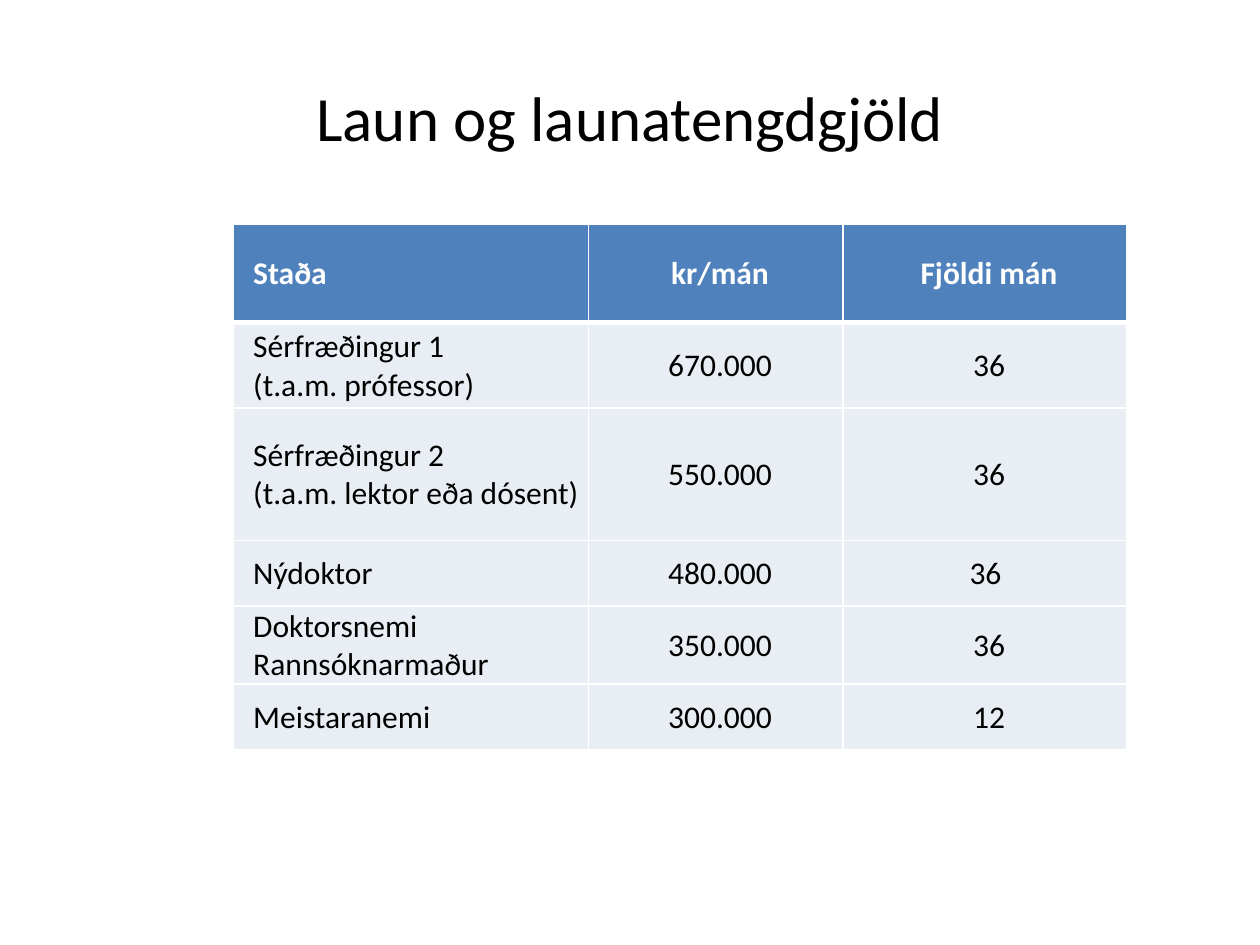
from lxml import etree
from pptx import Presentation
from pptx import util as u
from pptx.dml.color import RGBColor
from pptx.enum import text
from pptx.oxml.ns import qn

ROWS = [
    ("Staða", "kr/mán", "Fjöldi mán"),
    ("Sérfræðingur 1\n(t.a.m. prófessor)", "670.000", "36"),
    ("Sérfræðingur 2\n(t.a.m. lektor eða dósent)", "550.000", "36"),
    ("Nýdoktor", "480.000", "36 "),
    ("Doktorsnemi\nRannsóknarmaður", "350.000", "36"),
    ("Meistaranemi", "300.000", "12"),
]
WIDTHS = [2.82, 2.02, 2.25]
HEIGHTS = [0.78, 0.68, 1.05, 0.52, 0.62, 0.52]
MID = text.MSO_ANCHOR.MIDDLE
LEFT, CENTER = text.PP_ALIGN.LEFT, text.PP_ALIGN.CENTER


def color(hex):
    """Turn a hex string into a colour."""
    return RGBColor.from_string(hex)


def assign(item, values):
    """Set attributes from a dict of format values."""
    for name, value in values.items():
        setattr(item, name, value)


def write(frame, words, size, hue, align, bold=False):
    """Fill a text frame with evenly styled paragraphs."""
    frame.text = words
    for para in frame.paragraphs:
        para.alignment = align
        for run in para.runs:
            assign(run.font, {"name": "Calibri", "size": u.Pt(size), "bold": bold})
            run.font.color.rgb = color(hue)


def border(cell, base):
    """Draw white cell edges with the given base width in points."""
    props = cell._tc.get_or_add_tcPr()
    edges = {"a:lnL": 1, "a:lnR": 1, "a:lnT": 1, "a:lnB": base}
    for place, (tag, width) in enumerate(edges.items()):
        line = etree.Element(qn(tag), w=str(u.Pt(width)))
        fill = etree.SubElement(line, qn("a:solidFill"))
        etree.SubElement(fill, qn("a:srgbClr"), val="FFFFFF")
        props.insert(place, line)


def title(slide, left, top, width, height):
    """Place the centred heading."""
    box = slide.shapes.add_textbox(*map(u.Inches, (left, top, width, height)))
    assign(box.text_frame, {"word_wrap": True, "vertical_anchor": MID})
    write(box.text_frame, "Laun og launatengdgjöld", 36, "000000", CENTER)


def salaries(slide, left, top, width, height):
    """Place the salary table."""
    area = map(u.Inches, (left, top, width, height))
    table = slide.shapes.add_table(len(ROWS), len(WIDTHS), *area).table
    table.horz_banding = False
    for col, wide in zip(table.columns, WIDTHS):
        col.width = u.Inches(wide)
    for r, (row, tall) in enumerate(zip(ROWS, HEIGHTS)):
        table.rows[r].height = u.Inches(tall)
        head = r == 0
        for c, words in enumerate(row):
            cell = table.cell(r, c)
            assign(cell, {
                "vertical_anchor": MID,
                "margin_left": u.Inches(0.08 if c else 0.16),
                "margin_top": u.Inches(0.01),
                "margin_right": u.Inches(0.01),
                "margin_bottom": 0,
            })
            cell.fill.solid()
            cell.fill.fore_color.rgb = color("4F81BD" if head else "E9EDF4")
            border(cell, 3 if head else 1)
            hue = "FFFFFF" if head else "000000"
            write(cell.text_frame, words, 18, hue, CENTER if c else LEFT, head)


def main():
    """Build and save the slide."""
    deck = Presentation()
    assign(deck, {"slide_width": u.Inches(10), "slide_height": u.Inches(7.5)})
    slide = deck.slides.add_slide(deck.slide_layouts[6])
    title(slide, 0.5, 0.3, 9, 1.25)
    salaries(slide, 1.85, 1.78, sum(WIDTHS), sum(HEIGHTS))
    deck.save("out.pptx")


if __name__ == "__main__":
    main()
